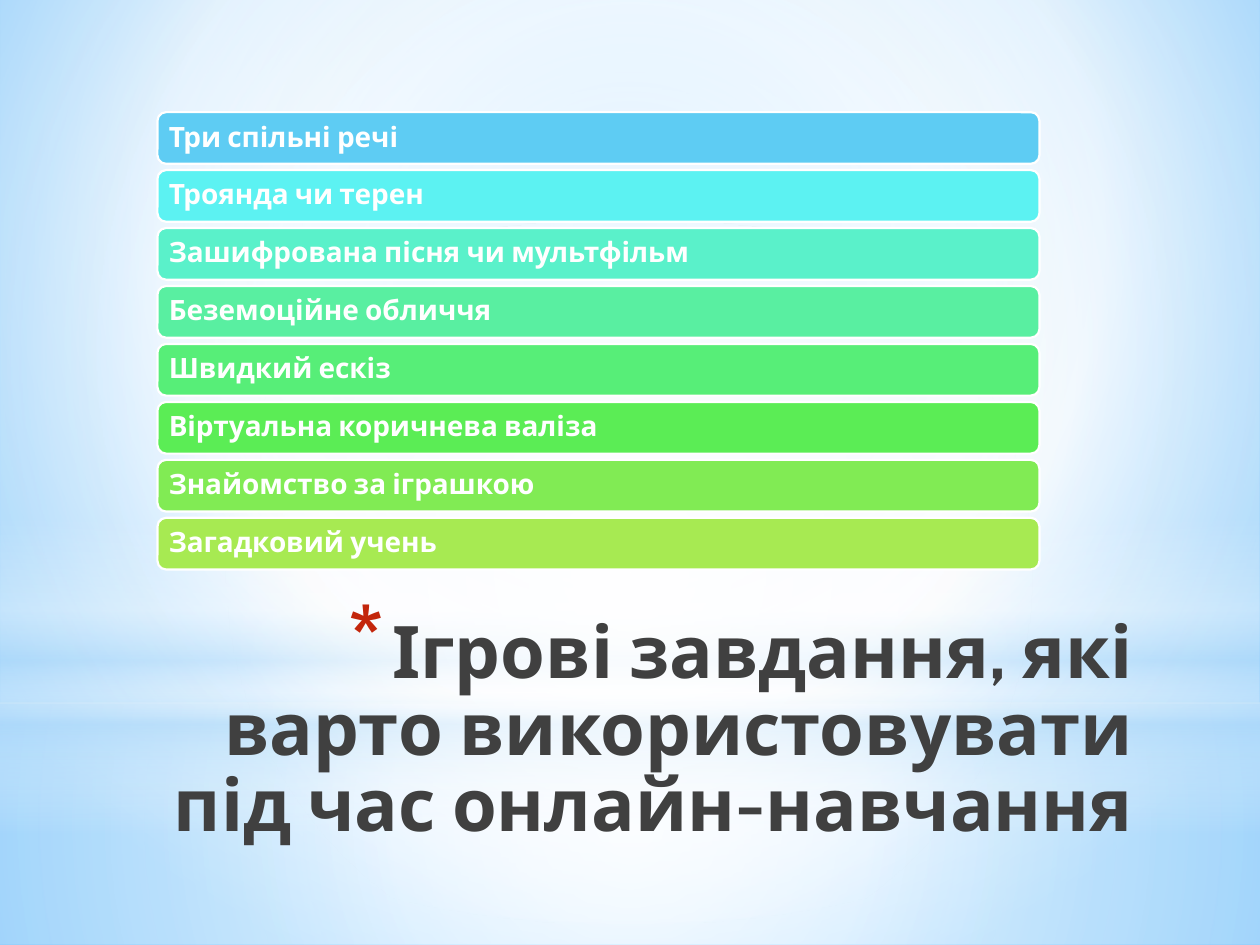
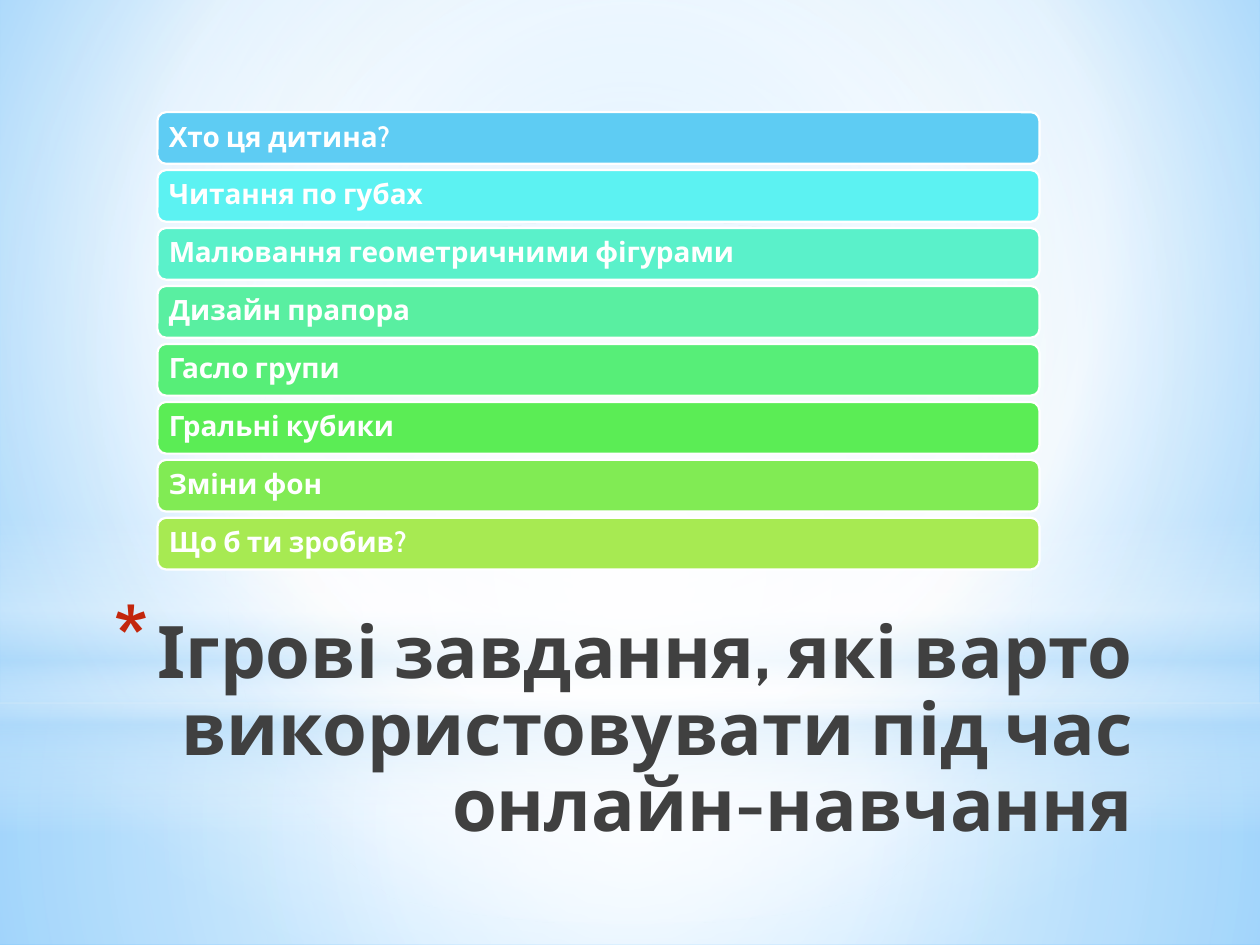
"""Build two slides of game tasks for online lessons."""
from typing import NamedTuple

from pptx import Presentation
from pptx.dml.color import RGBColor
from pptx.dml.fill import FillFormat
from pptx.enum.shapes import MSO_SHAPE
from pptx.enum.text import MSO_ANCHOR, MSO_AUTO_SIZE, PP_ALIGN
from pptx.oxml import parse_xml
from pptx.oxml.ns import nsdecls
from pptx.oxml.xmlchemy import BaseOxmlElement
from pptx.shapes.autoshape import Shape
from pptx.slide import Slide, SlideLayout
from pptx.text.text import TextFrame
from pptx.util import Emu, Pt

SCALE = 9144
FONT = "Cabin"
WHITE = RGBColor(0xFF, 0xFF, 0xFF)
MIST = RGBColor(0xB4, 0xDC, 0xFA)
SKY = RGBColor(0x9E, 0xD5, 0xFF)
BLUE = RGBColor(0x5B, 0xB9, 0xFF)
DARK = RGBColor(0x40, 0x40, 0x40)
RED = RGBColor(0xC3, 0x26, 0x0C)
BARS = (
    RGBColor(0x5E, 0xCC, 0xF3), RGBColor(0x5C, 0xF2, 0xF2),
    RGBColor(0x5A, 0xF1, 0xCA), RGBColor(0x59, 0xEF, 0xA1),
    RGBColor(0x57, 0xEE, 0x78), RGBColor(0x5B, 0xED, 0x55),
    RGBColor(0x81, 0xEB, 0x54), RGBColor(0xA7, 0xEA, 0x52),
)
TITLE = "Ігрові завдання, які варто використовувати під час онлайн-навчання"


class Box(NamedTuple):
    """Place and size in px."""
    left: int
    top: int
    width: int
    height: int


class Stop(NamedTuple):
    """Gradient stop: place and opacity in percent."""
    place: int
    color: RGBColor
    alpha: int = 100


class Blend(NamedTuple):
    """Gradient: round about a focus, or top to bottom without one."""
    stops: tuple[Stop, ...]
    focus: tuple[int, ...] = (50, 50, 50, 50)


class Glow(NamedTuple):
    """Soft shape behind the content."""
    kind: MSO_SHAPE
    box: Box
    blend: Blend


class Page(NamedTuple):
    """Title box and tasks of one slide."""
    box: Box
    tasks: tuple[str, ...]


BACK = Blend((Stop(0, SKY), Stop(60, WHITE), Stop(100, BLUE)), (20, 10, 20, 60))
GLOWS = (
    Glow(MSO_SHAPE.RECTANGLE, Box(0, 558, 1000, 192),
         Blend((Stop(0, WHITE, 91), Stop(37, WHITE, 76), Stop(100, MIST, 79)))),
    Glow(MSO_SHAPE.RECTANGLE, Box(0, 0, 1000, 558),
         Blend((Stop(0, WHITE, 89), Stop(48, WHITE, 62), Stop(100, MIST, 79)))),
    Glow(MSO_SHAPE.RECTANGLE, Box(0, 412, 1000, 250),
         Blend((Stop(0, WHITE, 0), Stop(29, WHITE, 30), Stop(45, MIST, 40),
                Stop(55, WHITE, 26), Stop(65, MIST, 60), Stop(100, WHITE, 0)), ())),
    Glow(MSO_SHAPE.OVAL, Box(0, 175, 1000, 558),
         Blend((Stop(0, WHITE), Stop(56, WHITE, 0)))),
)
FIRST = Box(125, 89, 700, 41)
STEP = 46
PAGES = (
    Page(Box(91, 478, 818, 125), (
        "Три спільні речі", "Троянда чи терен",
        "Зашифрована пісня чи мультфільм", "Беземоційне обличчя",
        "Швидкий ескіз", "Віртуальна коричнева валіза",
        "Знайомство за іграшкою", "Загадковий учень")),
    Page(Box(75, 478, 834, 125), (
        "Хто ця дитина?", "Читання по губах",
        "Малювання геометричними фігурами", "Дизайн прапора",
        "Гасло групи", "Гральні кубики", "Зміни фон", "Що б ти зробив?")),
)


def px(size: int) -> Emu:
    """Turn px into EMU."""
    return Emu(size * SCALE)


def blend_fill(fill: FillFormat, owner: BaseOxmlElement, blend: Blend) -> None:
    """Fill the owner with a gradient."""
    fill.solid()
    stops = "".join(
        f'<a:gs pos="{stop.place * 1000}"><a:srgbClr val="{stop.color}">'
        f'<a:alpha val="{stop.alpha * 1000}"/></a:srgbClr></a:gs>'
        for stop in blend.stops)
    if blend.focus:
        sides = " ".join(f'{side}="{part * 1000}"'
                         for side, part in zip("ltrb", blend.focus))
        form = f'<a:path path="circle"><a:fillToRect {sides}/></a:path>'
    else:
        form = '<a:lin ang="5400000" scaled="0"/>'
    solid = owner.xpath(".//a:solidFill")[0]
    solid.getparent().replace(solid, parse_xml(
        f'<a:gradFill {nsdecls("a")} rotWithShape="1">'
        f'<a:gsLst>{stops}</a:gsLst>{form}</a:gradFill>'))


def add_form(slide: Slide, kind: MSO_SHAPE, box: Box) -> Shape:
    """Add a preset shape without a shadow."""
    shape = slide.shapes.add_shape(kind, *map(px, box))
    shape.shadow.inherit = False
    return shape


def add_glows(slide: Slide, layout: SlideLayout) -> None:
    """Draw the glows and move them to the back of the layout."""
    tree = layout.shapes.element
    for count, glow in enumerate(GLOWS):
        shape = add_form(slide, glow.kind, glow.box)
        shape.line.fill.background()
        blend_fill(shape.fill, shape.element, glow.blend)
        shape.element.nvSpPr.cNvPr.set("id", str(90 + count))
        tree.insert(2 + count, shape.element)


def write(frame: TextFrame, text: str, size: float, color: RGBColor) -> None:
    """Add one bold run to the first paragraph."""
    run = frame.paragraphs[0].add_run()
    run.text = text
    run.font.name = FONT
    run.font.size = Pt(size)
    run.font.bold = True
    run.font.color.rgb = color


def set_title(slide: Slide, box: Box) -> None:
    """Place the title with its star bullet."""
    title = slide.shapes.title
    title.left, title.top, title.width, title.height = map(px, box)
    frame = title.text_frame
    frame.word_wrap = True
    frame.auto_size = MSO_AUTO_SIZE.NONE
    frame.vertical_anchor = MSO_ANCHOR.TOP
    frame.margin_left = frame.margin_right = px(10)
    frame.margin_top = px(12)
    para = frame.paragraphs[0]
    para.alignment = PP_ALIGN.RIGHT
    para.line_spacing = 0.88
    write(frame, TITLE, 41.4, DARK)
    props = para._p.get_or_add_pPr()
    props.set("marL", str(px(35)))
    props.set("indent", str(px(-35)))
    for mark in (f'<a:buClr {nsdecls("a")}><a:srgbClr val="{RED}"/></a:buClr>',
                 f'<a:buSzPct {nsdecls("a")} val="128000"/>',
                 f'<a:buChar {nsdecls("a")} char="*"/>'):
        props.append(parse_xml(mark))


def add_bar(slide: Slide, row: int, task: str) -> None:
    """Add one task bar."""
    box = FIRST._replace(top=FIRST.top + row * STEP)
    bar = add_form(slide, MSO_SHAPE.ROUNDED_RECTANGLE, box)
    bar.fill.solid()
    bar.fill.fore_color.rgb = BARS[row]
    bar.line.color.rgb = WHITE
    bar.line.width = Pt(1.25)
    frame = bar.text_frame
    frame.word_wrap = True
    frame.vertical_anchor = MSO_ANCHOR.MIDDLE
    frame.margin_left = frame.margin_right = px(7)
    frame.margin_top = frame.margin_bottom = px(7)
    para = frame.paragraphs[0]
    para.alignment = PP_ALIGN.LEFT
    para.line_spacing = 0.9
    write(frame, task, 16, WHITE)


def main() -> None:
    """Build and save the slides."""
    deck = Presentation()
    deck.slide_width, deck.slide_height = px(1000), px(750)
    master = deck.slide_master
    blend_fill(master.background.fill, master.element.cSld.bg, BACK)
    layout = deck.slide_layouts.get_by_name("Title Only")
    for count, page in enumerate(PAGES):
        slide = deck.slides.add_slide(layout)
        if count == 0:
            add_glows(slide, layout)
        set_title(slide, page.box)
        for row, task in enumerate(page.tasks):
            add_bar(slide, row, task)
    deck.save("out.pptx")


if __name__ == "__main__":
    main()
